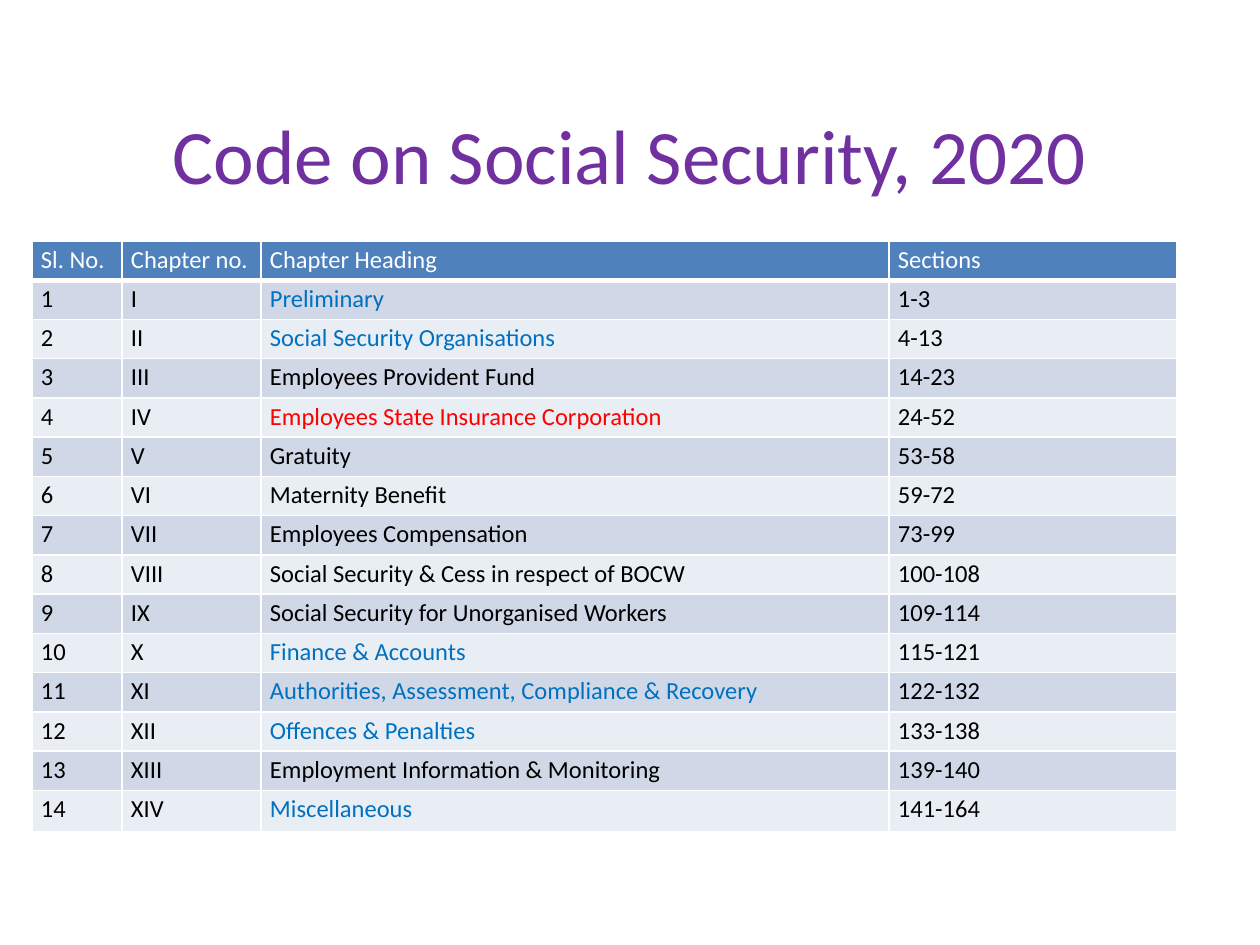
from lxml.etree import SubElement as Sub
from pptx import Presentation
from pptx.dml.color import RGBColor as RGB
from pptx.enum.text import MSO_ANCHOR as Anchor, PP_ALIGN as Align
from pptx.oxml.ns import qn
from pptx.util import Pt

WHITE = RGB(0xFF, 0xFF, 0xFF)
BLACK = RGB(0, 0, 0)
BLUE = RGB(0x00, 0x70, 0xC0)
RED = RGB(0xFF, 0, 0)
PURPLE = RGB(0x70, 0x30, 0xA0)
HEAD = RGB(0x4F, 0x81, 0xBD)
BANDS = RGB(0xE9, 0xED, 0xF4), RGB(0xD0, 0xD8, 0xE8)
FONT = "Calibri"

TITLE = "Code on Social Security, 2020"
LABELS = "Sl. No.", "Chapter no.", "Chapter Heading", "Sections"
CHAPTERS = [
    ("I", "Preliminary", "1-3", BLUE),
    ("II", "Social Security Organisations", "4-13", BLUE),
    ("III", "Employees Provident Fund", "14-23", BLACK),
    ("IV", "Employees State Insurance Corporation", "24-52", RED),
    ("V", "Gratuity", "53-58", BLACK),
    ("VI", "Maternity Benefit", "59-72", BLACK),
    ("VII", "Employees Compensation", "73-99", BLACK),
    ("VIII", "Social Security & Cess in respect of BOCW", "100-108", BLACK),
    ("IX", "Social Security for Unorganised Workers", "109-114", BLACK),
    ("X", "Finance & Accounts", "115-121", BLUE),
    ("XI", "Authorities, Assessment, Compliance & Recovery", "122-132", BLUE),
    ("XII", "Offences & Penalties", "133-138", BLUE),
    ("XIII", "Employment Information & Monitoring", "139-140", BLACK),
    ("XIV", "Miscellaneous", "141-164", BLUE),
]
WIDTHS = 90, 139, 628, 288
LEFT, TOP, HIGH, LAST = 32, 241, 591, 41


def px(n):
    return round(n * 914400 / 126)


def style(para, size, color):
    font = para.font
    font.name, font.size, font.bold = FONT, Pt(size), False
    font.color.rgb = color


def border(cell, base):
    props = cell._tc.get_or_add_tcPr()
    for side, wide in ("lnL", 1), ("lnR", 1), ("lnT", 1), ("lnB", base):
        line = Sub(props, qn("a:" + side), w=str(Pt(wide)))
        Sub(Sub(line, qn("a:solidFill")), qn("a:srgbClr"), val=str(WHITE))


def put(cell, text, color, fill, base=1):
    cell.margin_left = cell.margin_right = px(9)
    cell.margin_top = cell.margin_bottom = px(4)
    cell.text = text
    style(cell.text_frame.paragraphs[0], 14, color)
    border(cell, base)
    cell.fill.solid()
    cell.fill.fore_color.rgb = fill


def add_title(slide):
    frame = slide.shapes.add_textbox(px(87), px(95), px(1086), px(118)).text_frame
    frame.word_wrap = True
    frame.vertical_anchor = Anchor.MIDDLE
    para = frame.paragraphs[0]
    para.text = TITLE
    para.alignment = Align.CENTER
    style(para, 44, PURPLE)


def add_grid(slide):
    count = len(CHAPTERS)
    table = slide.shapes.add_table(
        count + 1, len(WIDTHS), px(LEFT), px(TOP), px(sum(WIDTHS)), px(HIGH)
    ).table
    for col, wide in zip(table.columns, WIDTHS):
        col.width = px(wide)
    for row in table.rows:
        row.height = px((HIGH - LAST) / count)
    table.rows[count].height = px(LAST)
    for col, label in enumerate(LABELS):
        put(table.cell(0, col), label, WHITE, HEAD, 3)
    for num, (roman, name, span, color) in enumerate(CHAPTERS, 1):
        for col, text in enumerate((str(num), roman, name, span)):
            ink = color if text == name else BLACK
            put(table.cell(num, col), text, ink, BANDS[num % 2])


def main():
    deck = Presentation()
    deck.slide_width, deck.slide_height = px(1260), px(945)
    slide = deck.slides.add_slide(deck.slide_layouts[6])
    add_title(slide)
    add_grid(slide)
    deck.save("out.pptx")


if __name__ == "__main__":
    main()
